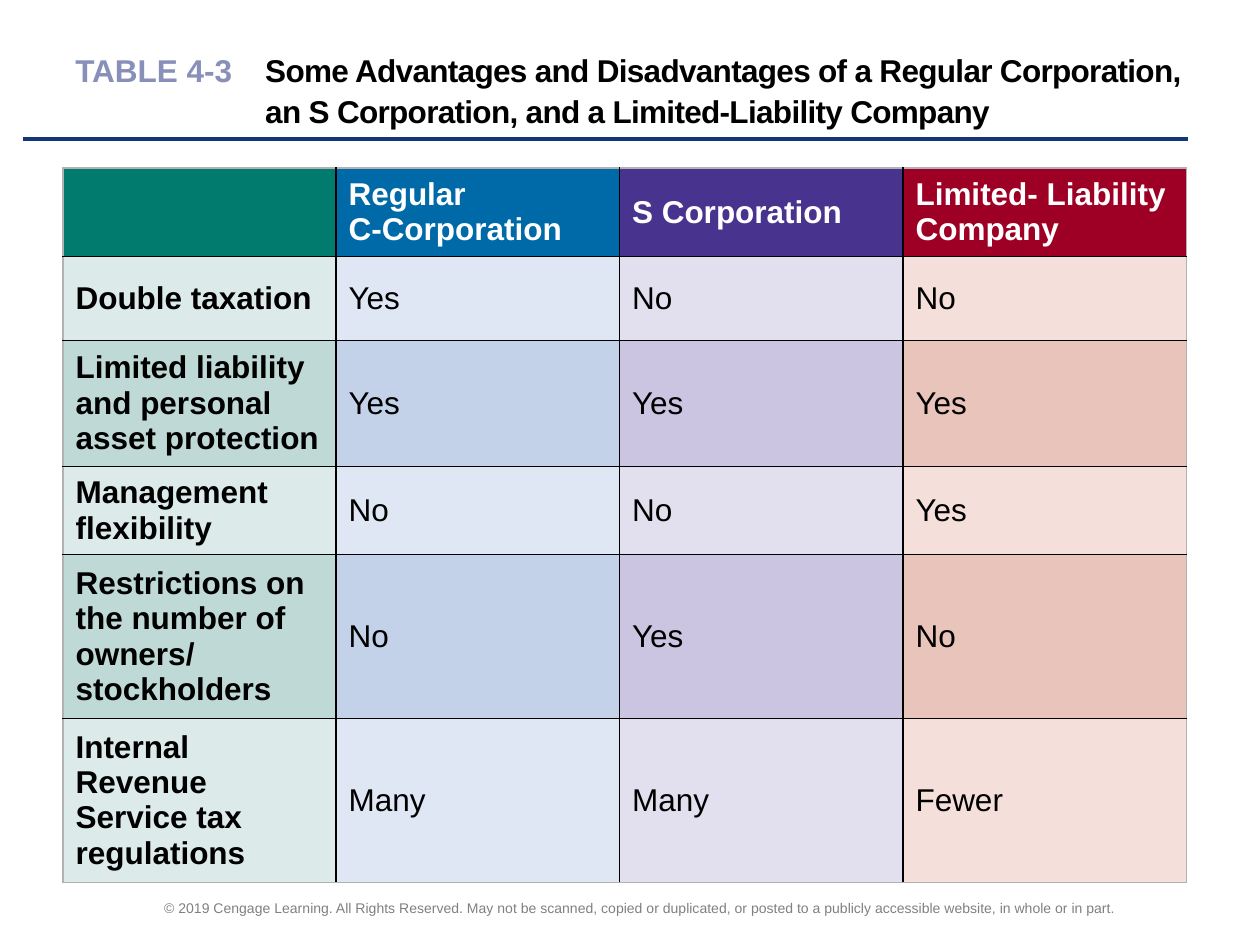
"""Build a slide with a table comparing three forms of corporation."""
import dataclasses

import lxml.etree
import pptx
import pptx.dml.color
import pptx.enum.shapes
import pptx.enum.text
import pptx.oxml.ns
import pptx.util

Pt = pptx.util.Pt
Color = pptx.dml.color.RGBColor.from_string
qn = pptx.oxml.ns.qn
MIDDLE = pptx.enum.text.MSO_ANCHOR.MIDDLE


@dataclasses.dataclass(frozen=True)
class Theme:
    font: str = "Arial"
    body_size: int = 18
    footer_size: int = 8
    black: str = "000000"
    white: str = "FFFFFF"
    label: str = "888FB8"
    footer: str = "808080"
    rule: str = "133676"
    frame: str = "B2B2B2"
    header_fills: tuple = ("007B6D", "006AA9", "48348E", "9E0025")
    light_fills: tuple = ("DCEBE9", "DEE7F3", "E2DFEF", "F4DFDA")
    dark_fills: tuple = ("BFDAD6", "C3D2E9", "CBC5E1", "E9C4BB")


theme = Theme()


def style_font(font, size, color, bold=False):
    font.name = theme.font
    font.size = Pt(size)
    font.bold = bold
    font.color.rgb = Color(color)


def add_text_box(left, top, width, height):
    text_frame = slide.shapes.add_textbox(Pt(left), Pt(top), Pt(width), Pt(height)).text_frame
    text_frame.word_wrap = True
    text_frame.vertical_anchor = MIDDLE
    return text_frame.paragraphs[0]


presentation = pptx.Presentation()
presentation.slide_width = Pt(720)
presentation.slide_height = Pt(540)
slide = presentation.slides.add_slide(presentation.slide_layouts[6])

footer = add_text_box(54, 509.76, 624, 18)
footer.text = (
    "© 2019 Cengage Learning. All Rights Reserved. May not be scanned, copied or "
    "duplicated, or posted to a publicly accessible website, in whole or in part."
)
footer.alignment = pptx.enum.text.PP_ALIGN.CENTER
style_font(footer.runs[0].font, theme.footer_size, theme.footer)

rule = slide.shapes.add_connector(
    pptx.enum.shapes.MSO_CONNECTOR.STRAIGHT, Pt(13), Pt(79.6), Pt(679), Pt(79.6)
)
rule.line.color.rgb = Color(theme.rule)
rule.line.width = Pt(2.25)
lxml.etree.SubElement(rule._element.spPr, qn("a:effectLst"))

title = add_text_box(36, 24, 648, 54)
hanging = Pt(108.5)
properties = title._p.get_or_add_pPr()
properties.set("marL", str(hanging))
properties.set("indent", str(-hanging))
tabs = lxml.etree.SubElement(properties, qn("a:tabLst"))
lxml.etree.SubElement(tabs, qn("a:tab"), pos=str(hanging), algn="l")
title.line_spacing = 1.08
label = title.add_run()
label.text = "TABLE 4-3\t"
style_font(label.font, theme.body_size, theme.label, True)
heading = title.add_run()
heading.text = (
    "Some Advantages and Disadvantages of a Regular Corporation, "
    "an S Corporation, and a Limited-Liability Company"
)
style_font(heading.font, theme.body_size, theme.black, True)
heading.font._element.set("spc", "-40")

rows = [
    (48, ("", "Regular \vC-Corporation", "S Corporation", "Limited- Liability Company")),
    (48, ("Double taxation", "Yes", "No", "No")),
    (67.7, ("Limited liability and personal asset protection", "Yes", "Yes", "Yes")),
    (48, ("Management flexibility", "No", "No", "Yes")),
    (88, ("Restrictions on the number of owners/\vstockholders", "No", "Yes", "No")),
    (88, ("Internal Revenue Service tax regulations", "Many", "Many", "Fewer")),
]
column_widths = (156, 162, 162, 162)
last_row, last_column = len(rows) - 1, len(column_widths) - 1
table = slide.shapes.add_table(
    len(rows), len(column_widths), Pt(36), Pt(96),
    Pt(sum(column_widths)), Pt(sum(height for height, _ in rows)),
).table
for column, width in zip(table.columns, column_widths):
    column.width = Pt(width)

for row_index, (height, texts) in enumerate(rows):
    table.rows[row_index].height = Pt(height)
    is_header = row_index == 0
    band = theme.light_fills if row_index % 2 else theme.dark_fills
    fills = theme.header_fills if is_header else band
    for column_index, (text, fill) in enumerate(zip(texts, fills)):
        cell = table.cell(row_index, column_index)
        cell.vertical_anchor = MIDDLE
        cell.text_frame.text = text
        paragraph = cell.text_frame.paragraphs[0]
        for font in [paragraph.font] + [run.font for run in paragraph.runs]:
            style_font(
                font, theme.body_size, theme.white if is_header else theme.black,
                is_header or column_index == 0,
            )
        outer_edges = {
            "a:lnL": column_index == 0,
            "a:lnR": column_index == last_column,
            "a:lnT": row_index == 0,
            "a:lnB": row_index == last_row,
        }
        cell_properties = cell._tc.get_or_add_tcPr()
        for tag, is_outer in outer_edges.items():
            border = lxml.etree.SubElement(cell_properties, qn(tag), w=str(Pt(1)))
            solid = lxml.etree.SubElement(border, qn("a:solidFill"))
            color = theme.frame if is_outer else theme.black
            lxml.etree.SubElement(solid, qn("a:srgbClr"), val=color)
        cell.fill.solid()
        cell.fill.fore_color.rgb = Color(fill)

presentation.save("out.pptx")
